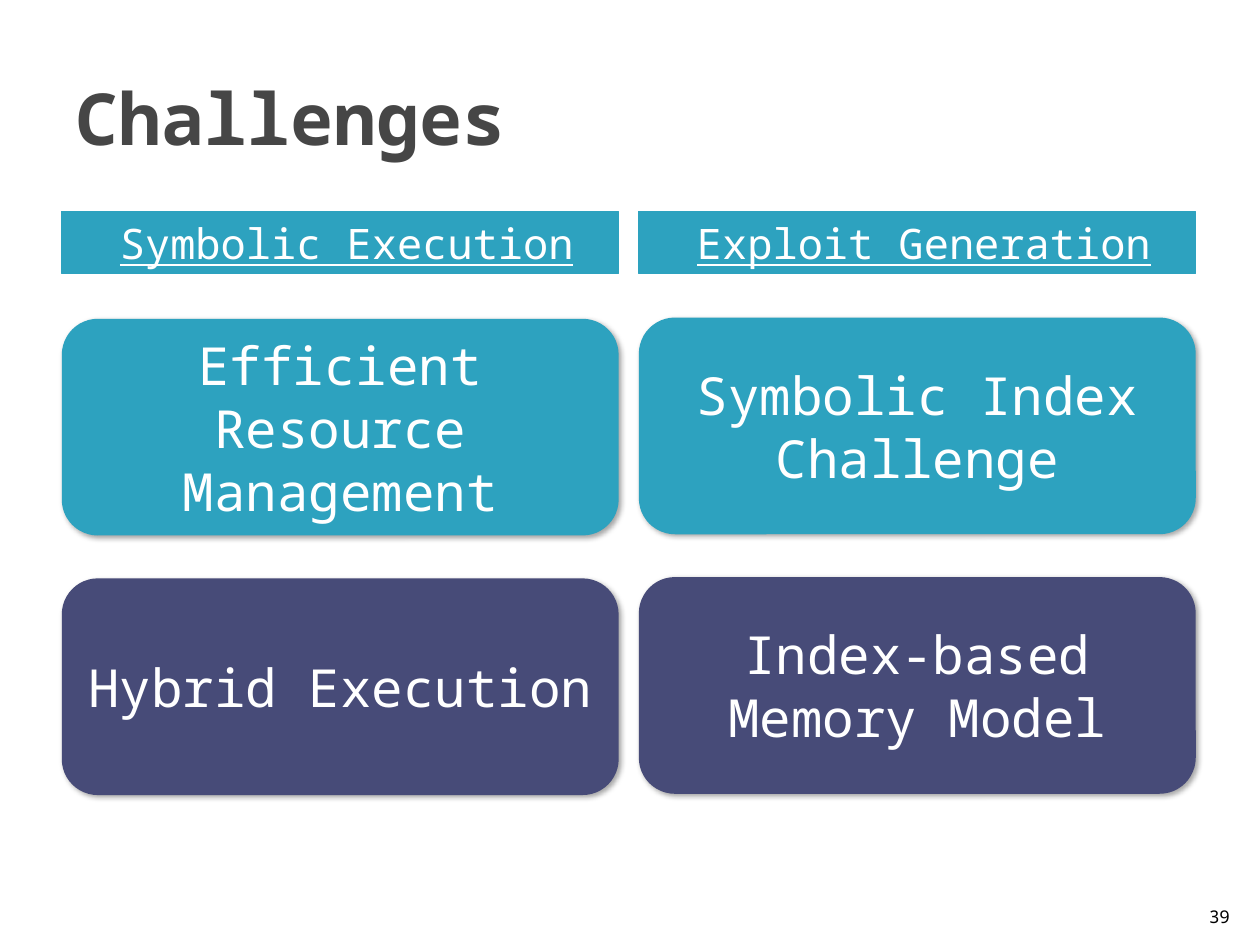
"""Build the Challenges slide: two headed columns of rounded cards."""
from lxml.etree import SubElement
from pptx import Presentation
from pptx.dml.color import RGBColor
from pptx.enum.shapes import MSO_SHAPE as SHAPE
from pptx.enum.text import MSO_ANCHOR as ANCHOR, PP_ALIGN as ALIGN
from pptx.oxml.ns import qn
from pptx.util import Inches, Pt

TEAL = RGBColor(0x2D, 0xA2, 0xBF)
INDIGO = RGBColor(0x47, 0x4B, 0x78)
GRAY = RGBColor(0x46, 0x46, 0x46)
WHITE = RGBColor(0xFF, 0xFF, 0xFF)
BLACK = RGBColor(0, 0, 0)
FONT = "Noto Sans Mono"

COLUMNS = [
    ("Symbolic Execution", 2.53, ["Efficient Resource Management", "Hybrid Execution"]),
    ("Exploit Generation", 2.52, ["Symbolic Index\nChallenge", "Index-based Memory Model"]),
]
CARD_FILLS = [TEAL, INDIGO]
LEFT, COLUMN_STEP, WIDTH = 0.49, 4.58, 4.42
HEADER_TOP, HEADER_H = 1.68, 0.49
CARD_H, CARD_STEP = 1.72, 2.06


def write(sp, text, size, color, align=ALIGN.CENTER, anchor=ANCHOR.MIDDLE):
    tf = sp.text_frame
    tf.word_wrap = True
    tf.vertical_anchor = anchor
    p = tf.paragraphs[0]
    p.alignment = align
    for i, line in enumerate(text.split("\n")):
        if i:
            p.add_line_break()
        r = p.add_run()
        r.text = line
        r.font.name, r.font.size, r.font.color.rgb = FONT, Pt(size), color
    return r


def add_box(s, kind, x, y, h, fill):
    sp = s.shapes.add_shape(kind, Inches(x), Inches(y), Inches(WIDTH), Inches(h))
    sp.shadow.inherit = False
    sp.fill.solid()
    sp.fill.fore_color.rgb = fill
    return sp


def add_header(s, x, text):
    sp = add_box(s, SHAPE.RECTANGLE, x, HEADER_TOP, HEADER_H, TEAL)
    sp.line.color.rgb = TEAL
    sp.line.width = Pt(0.75)
    sp.text_frame.margin_left = Inches(0.2)
    write(sp, text, 24, WHITE).font.underline = True


def add_card(s, x, y, text, fill):
    sp = add_box(s, SHAPE.ROUNDED_RECTANGLE, x, y, CARD_H, fill)
    sp.line.fill.background()
    effects = sp.element.spPr.find(qn("a:effectLst"))
    shadow = SubElement(effects, qn("a:outerShdw"), blurRad=str(Pt(3.1)),
                        dist=str(Pt(1.8)), dir=str(45 * 60000), rotWithShape="0")
    color = SubElement(shadow, qn("a:srgbClr"), val=str(BLACK))
    SubElement(color, qn("a:alpha"), val="35000")
    write(sp, text, 30, WHITE)


def add_text(s, x, y, w, h, *text):
    sp = s.shapes.add_textbox(Inches(x), Inches(y), Inches(w), Inches(h))
    return write(sp, *text)


def main():
    prs = Presentation()
    prs.slide_width, prs.slide_height = Inches(10), Inches(7.5)
    s = prs.slides.add_slide(prs.slide_layouts[6])
    add_text(s, 0.5, 0.3, 9, 1.25, "Challenges", 41, GRAY, ALIGN.LEFT).font.bold = True
    for col, (header, card_top, cards) in enumerate(COLUMNS):
        x = LEFT + col * COLUMN_STEP
        add_header(s, x, header)
        for row, (text, fill) in enumerate(zip(cards, CARD_FILLS)):
            add_card(s, x, card_top + row * CARD_STEP, text, fill)
    add_text(s, 9.46, 7.01, 0.4, 0.4, "39", 10, BLACK, ALIGN.RIGHT, ANCHOR.BOTTOM)
    prs.save("out.pptx")


if __name__ == "__main__":
    main()
